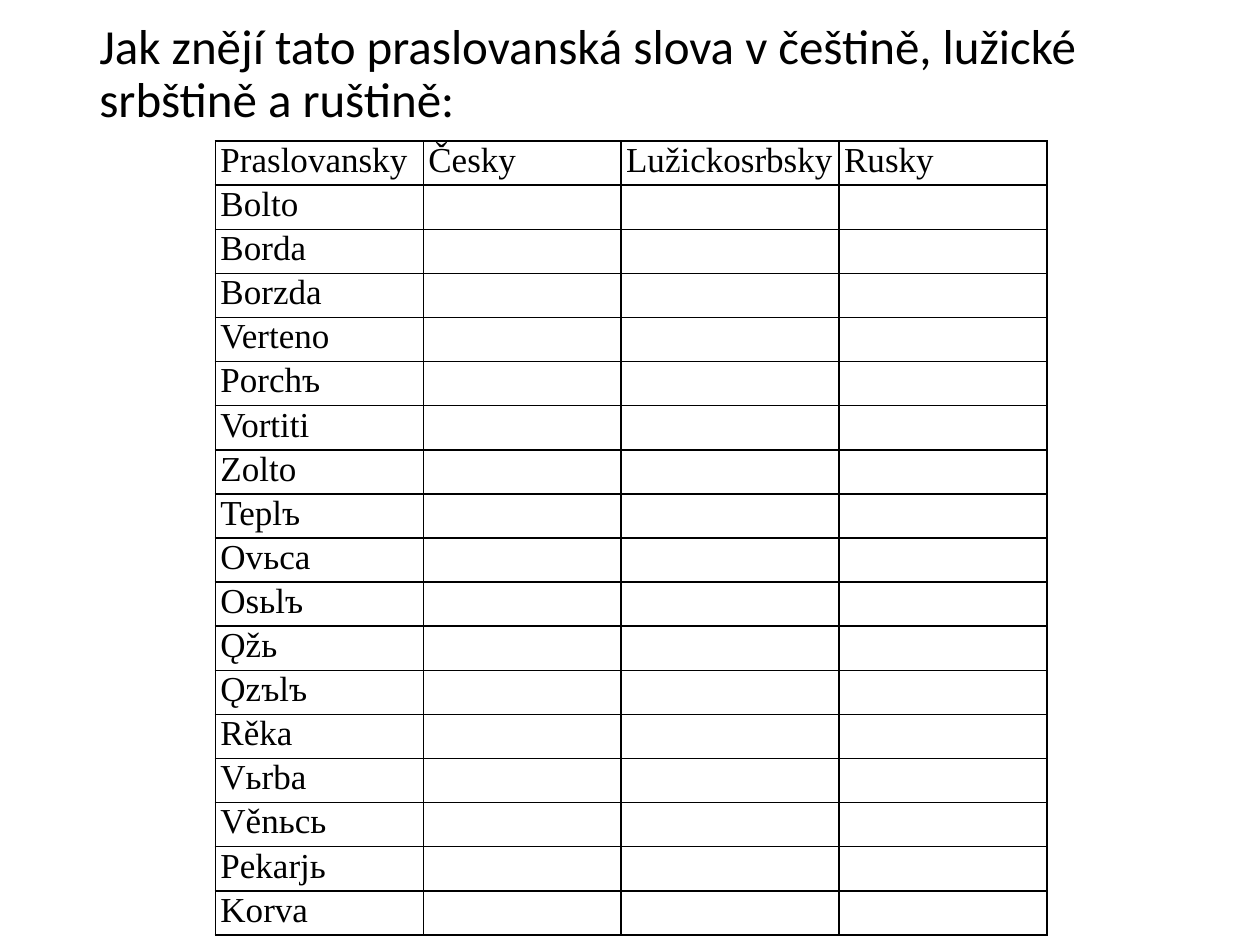
import pptx
import pptx.util
import pptx.dml.color
import pptx.enum.text
import pptx.oxml.ns
from lxml import etree

Inches, Pt = pptx.util.Inches, pptx.util.Pt
Align, Anchor = pptx.enum.text.PP_ALIGN, pptx.enum.text.MSO_ANCHOR
qn = pptx.oxml.ns.qn
BLACK = pptx.dml.color.RGBColor(0, 0, 0)

# Content
TITLE = "Jak znějí tato praslovanská slova v češtině, lužické srbštině a ruštině:"
HEADS = ["Praslovansky ", "Česky ", "Lužickosrbsky ", "Rusky "]
WORDS = ["Bolto", "Borda", "Borzda", "Verteno", "Porchъ", "Vortiti", "Zolto",
         "Teplъ", "Ovьca", "Osьlъ", "Ǫžь", "Ǫzъlъ", "Rěka", "Vьrba", "Věnьcь",
         "Pekarjь", "Korva"]
WIDTHS = [1.65, 1.57, 1.73, 1.65]
ROW = 0.35


def write(frame, text, font, size, align=Align.LEFT, space=1.0):
    par = frame.paragraphs[0]
    par.alignment, par.line_spacing = align, space
    run = par.add_run()
    run.text = text
    run.font.name, run.font.size = font, Pt(size)
    run.font.color.rgb = BLACK


def border(cell):
    props = cell._tc.get_or_add_tcPr()
    for side in ("lnL", "lnR", "lnT", "lnB"):
        line = etree.SubElement(props, qn("a:" + side), w=str(Pt(1)))
        fill = etree.SubElement(line, qn("a:solidFill"))
        etree.SubElement(fill, qn("a:srgbClr"), val=str(BLACK))


deck = pptx.Presentation()
deck.slide_width, deck.slide_height = Inches(10), Inches(7.5)
slide = deck.slides.add_slide(deck.slide_layouts[6])

# Title
box = slide.shapes.add_textbox(Inches(0.69), Inches(0.18), Inches(8.62), Inches(0.83))
box.text_frame.word_wrap = True
box.text_frame.vertical_anchor = Anchor.MIDDLE
write(box.text_frame, TITLE, "Calibri", 28, space=0.9)

# Word table: only the first column is filled below the heads
rows = [HEADS] + [[word, "", "", ""] for word in WORDS]
table = slide.shapes.add_table(
    len(rows), len(HEADS), Inches(1.71), Inches(1.12),
    Inches(sum(WIDTHS)), Inches(ROW * len(rows))).table
table.first_row = table.horz_banding = False
for col, width in zip(table.columns, WIDTHS):
    col.width = Inches(width)
for r, row in enumerate(rows):
    table.rows[r].height = Inches(ROW)
    for c, text in enumerate(row):
        cell = table.cell(r, c)
        cell.margin_left = cell.margin_right = Inches(0.04)
        cell.margin_top = cell.margin_bottom = 0
        border(cell)
        cell.fill.background()
        if text:
            write(cell.text_frame, text, "Times New Roman", 20, Align.JUSTIFY)

deck.save("out.pptx")
